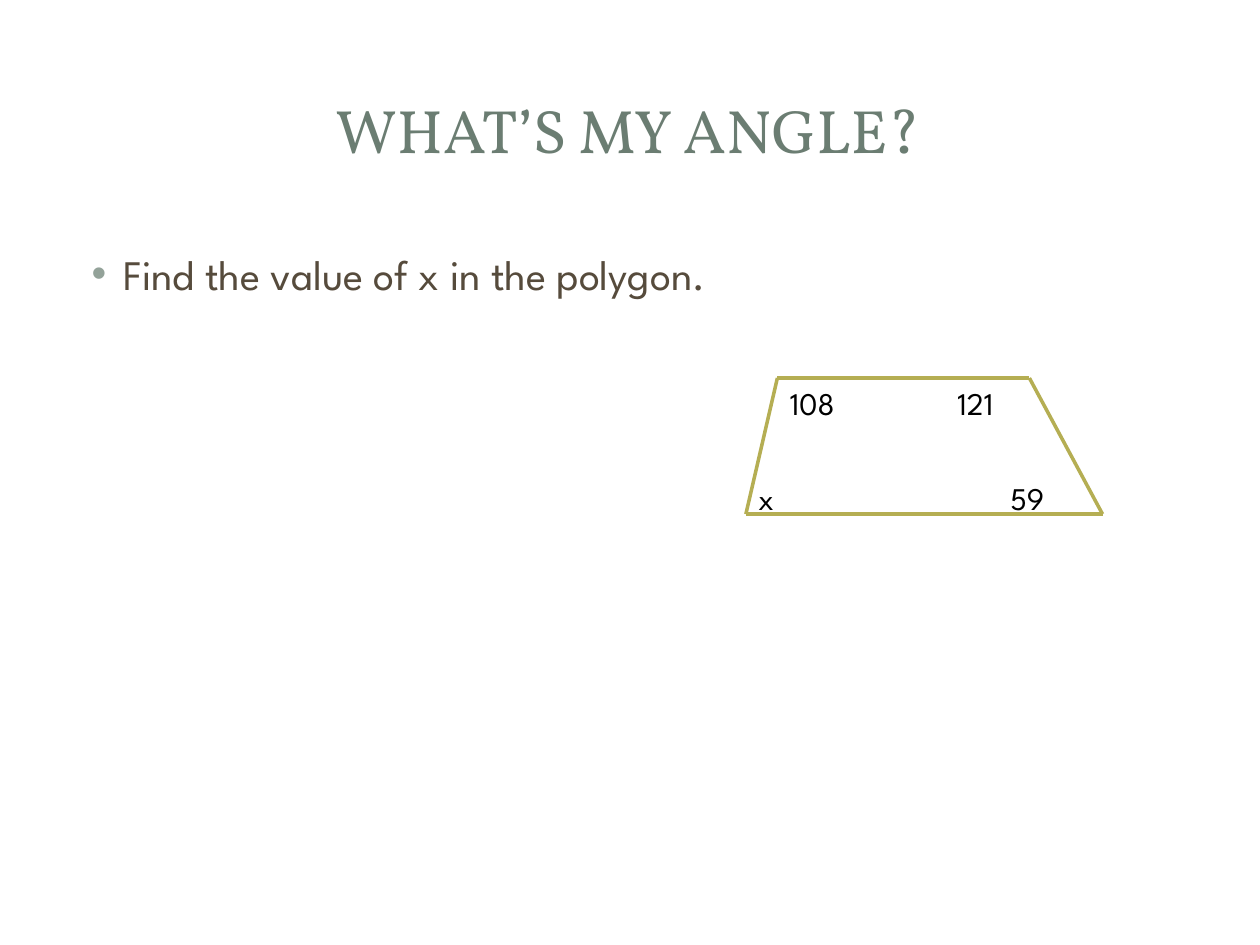
"""Build a slide that asks for the missing angle of a trapezoid."""
from lxml import etree
from pptx import Presentation
from pptx.dml.color import RGBColor
from pptx.enum.shapes import MSO_CONNECTOR
from pptx.enum.text import MSO_ANCHOR, PP_ALIGN
from pptx.oxml.ns import qn
from pptx.util import Inches, Pt

STRAIGHT = MSO_CONNECTOR.STRAIGHT
LEFT, CENTER = PP_ALIGN.LEFT, PP_ALIGN.CENTER
TOP, MIDDLE = MSO_ANCHOR.TOP, MSO_ANCHOR.MIDDLE

SAGE = RGBColor(0x6B, 0x7D, 0x72)
BULLET_GREY = RGBColor(0x93, 0xA2, 0x99)
BROWN = RGBColor(0x56, 0x4B, 0x3C)
OLIVE = RGBColor(0xB5, 0xAE, 0x53)
BLACK = RGBColor(0, 0, 0)
HEADING_FONT, BODY_FONT = "Vollkorn", "League Spartan"

TITLE = "WHAT’S MY ANGLE?"
TASK = "Find the value of x in the polygon."
CORNERS = [(6.17, 3), (8.17, 3), (8.75, 4.08), (5.92, 4.08)]
ANGLES = [
    ("x", (5.92, 3.75, 0.42, 0.42)),
    ("59", (7.92, 3.75, 0.83, 0.42)),
    ("121", (7.5, 3, 0.67, 0.42)),
    ("108", (6.17, 3, 0.67, 0.4)),
]


def write(shape, text, box, size=18, font=BODY_FONT, color=BLACK, align=LEFT, anchor=TOP):
    shape.left, shape.top, shape.width, shape.height = map(Inches, box)
    frame = shape.text_frame
    frame.word_wrap = True
    frame.vertical_anchor = anchor
    paragraph = frame.paragraphs[0]
    paragraph.alignment = align
    run = paragraph.add_run()
    run.text = text
    run.font.size = Pt(size)
    run.font.name = font
    run.font.color.rgb = color
    return paragraph


def add_bullet(paragraph, color):
    properties = paragraph._p.get_or_add_pPr()
    properties.set("marL", str(Inches(0.38)))
    properties.set("indent", str(Inches(-0.25)))
    bullet_color = etree.SubElement(properties, qn("a:buClr"))
    etree.SubElement(bullet_color, qn("a:srgbClr"), val=str(color))
    etree.SubElement(properties, qn("a:buFont"), typeface="Arial")
    etree.SubElement(properties, qn("a:buChar"), char="•")


def add_side(trapezoid, start, end):
    side = trapezoid.shapes.add_connector(STRAIGHT, *map(Inches, start + end))
    side.line.color.rgb = OLIVE
    side.line.width = Pt(2)
    etree.SubElement(side._element.spPr, qn("a:effectLst"))


def main():
    deck = Presentation()
    deck.slide_width, deck.slide_height = Inches(10), Inches(7.5)
    slide = deck.slides.add_slide(deck.slide_layouts[5])
    shapes = slide.shapes

    write(shapes.title, TITLE, (0.47, 0.45, 9.03, 1.14), size=35,
          font=HEADING_FONT, color=SAGE, align=CENTER, anchor=MIDDLE)
    task = write(shapes.add_textbox(0, 0, 0, 0), TASK, (0.5, 1.92, 9, 4.78),
                 size=24, color=BROWN)
    task.space_before = Pt(4.8)
    add_bullet(task, BULLET_GREY)

    trapezoid = shapes.add_group_shape()
    for start, end in zip(CORNERS, CORNERS[1:] + CORNERS[:1]):
        add_side(trapezoid, start, end)
    for angle, box in ANGLES:
        write(shapes.add_textbox(0, 0, 0, 0), angle, box)

    deck.save("out.pptx")


if __name__ == "__main__":
    main()
